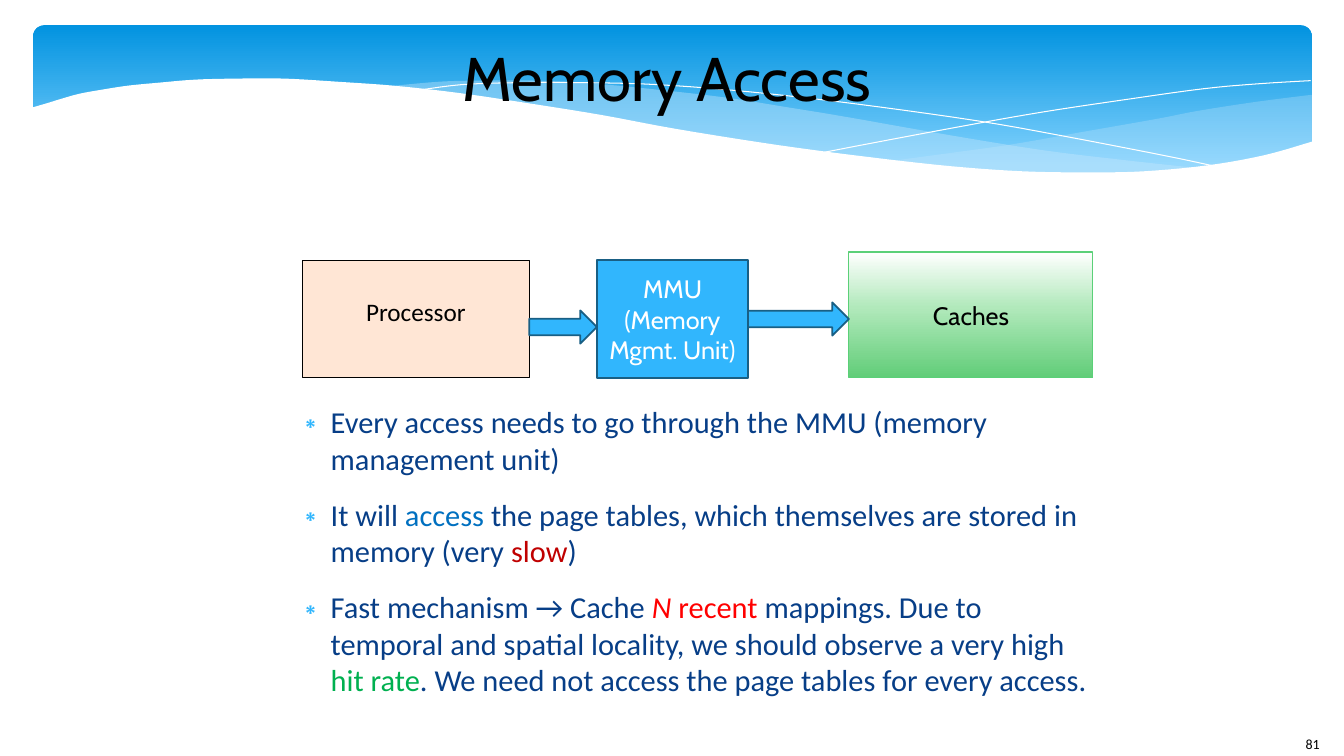
import copy

import pptx
import pptx.dml.color
import pptx.enum.shapes
import pptx.enum.text
import pptx.oxml
import pptx.oxml.ns
import pptx.util
from lxml import etree

PX = 9144  # 100 px to the inch
COLOURS = {
    "black": "000000", "white": "FFFFFF", "band top": "0293E0", "band foot": "83D3FE",
    "wave": "C6E7FC", "peach": "FFE6D5", "sky": "31B6FD", "sky edge": "195F84",
    "mint": "B1E9BB", "green": "61CD78", "green edge": "5BD078", "navy": "073E87",
    "blue": "0070C0", "dark red": "C00000", "red": "FF0000", "leaf": "00B050",
}
SHAPES = pptx.enum.shapes.MSO_SHAPE
MIDDLE = pptx.enum.text.MSO_ANCHOR.MIDDLE
CENTER = pptx.enum.text.PP_ALIGN.CENTER

BAND = (33, 25, 1268, 156)
WAVES = [  # (outline knots, opacity in percent); knots are smoothed
    ([[(1301, 94), (1246, 101), (1188, 110), (1147, 118), (1073, 131), (1005, 143), (941, 152), (882, 160)],
      [(882, 160), (940, 165), (993, 169), (1041, 171), (1085, 172), (1126, 171), (1163, 169),
       (1196, 165), (1238, 158), (1266, 152), (1301, 142)]], 29),
    ([[(1190, 167), (1116, 159), (1034, 149), (941, 134), (839, 116), (778, 106), (721, 97), (652, 89),
       (589, 83), (532, 80), (482, 80), (437, 81), (382, 86)],
      [(382, 86), (456, 94), (539, 106), (599, 116), (706, 135), (802, 150), (887, 161), (963, 168),
       (1030, 172), (1090, 173), (1143, 171), (1190, 167)]], 40),
]
STRANDS = [
    [(412, 90), (458, 84), (516, 82), (577, 82), (652, 84), (742, 91), (848, 103), (970, 120),
     (1060, 136), (1158, 155), (1210, 166)],
    [(818, 151), (870, 141), (961, 124), (1035, 111), (1115, 99), (1194, 88), (1250, 83), (1300, 80)],
]
PAGE_EDGE = [
    [(1303, 140), (1254, 154), (1198, 164), (1134, 170), (1078, 171), (1015, 170), (944, 165), (863, 156),
     (772, 144), (671, 128), (596, 114), (521, 102), (453, 92), (390, 85), (333, 81), (282, 78), (235, 78),
     (194, 79), (158, 82), (127, 85), (101, 89), (79, 93), (61, 98), (48, 102), (31, 107)],
    [(31, 224), (1303, 224)],
]
BULLETS = [
    [("Every access needs to go through the MMU (memory management unit)", "navy")],
    [("It will ", "navy"), ("access ", "blue"),
     ("the page tables, which themselves are stored in memory (very ", "navy"),
     ("slow", "dark red"), (")", "navy")],
    [("Fast mechanism → Cache ", "navy"), ("N", "red"), (" recent ", "red"),
     ("mappings. Due to temporal and spatial locality, we should observe a very high ", "navy"),
     ("hit rate", "leaf"), (". We need not access the page tables for every access.", "navy")],
]


def rgb(name):
    return pptx.dml.color.RGBColor.from_string(COLOURS[name])


def scaled(box):
    return [length * PX for length in box]


def place(shape, box):
    shape.left, shape.top, shape.width, shape.height = scaled(box)


def paint(shape, fill=None, line=None, width=0):
    shape.shadow.inherit = False
    if fill:
        shape.fill.solid()
        shape.fill.fore_color.rgb = rgb(fill)
    else:
        shape.fill.background()
    if line:
        shape.line.color.rgb = rgb(line)
        shape.line.width = pptx.util.Pt(width)
    else:
        shape.line.fill.background()


def shade_downwards(shape, stops):
    """Fill from top to foot with (percent, colour name) stops."""
    shape.fill.gradient()
    shape.fill.gradient_angle = 270
    stop_list = shape._element.spPr.find(".//" + pptx.oxml.ns.qn("a:gsLst"))
    while len(stop_list) < len(stops):
        stop_list.append(copy.deepcopy(stop_list[-1]))
    for stop, (percent, name) in zip(shape.fill.gradient_stops, stops):
        stop.position = percent / 100
        stop.color.rgb = rgb(name)


def write(para, text, size, colour, font="Calibri"):
    span = para.add_run()
    span.text = text
    span.font.size = pptx.util.Pt(size)
    span.font.name = font
    span.font.color.rgb = rgb(colour)
    return span


def clear_insets(frame):
    frame.margin_left = frame.margin_top = frame.margin_right = frame.margin_bottom = 0
    frame.word_wrap = True
    frame.auto_size = pptx.enum.text.MSO_AUTO_SIZE.NONE


def smooth(knots, steps=5):
    """Catmull-Rom points through the knots, in EMU."""
    padded = [knots[0], *knots, knots[-1]]
    points = [tuple(scaled(knots[0]))]
    for a, b, c, d in zip(padded, padded[1:], padded[2:], padded[3:]):
        for step in range(1, steps + 1):
            t = step / steps
            points.append(tuple(
                PX * (q + t * (r - p) / 2 + t * t * (2 * p - 5 * q + 4 * r - s) / 2
                      + t ** 3 * (3 * q - p - 3 * r + s) / 2)
                for p, q, r, s in zip(a, b, c, d)))
    return points


def draw_curve(page, curves, close):
    points = [point for knots in curves for point in smooth(knots)]
    builder = page.shapes.build_freeform(*points[0], scale=1.0)
    builder.add_line_segments(points[1:], close=close)
    return builder.convert_to_shape()


def add_wave_band(page, box):
    band = page.shapes.add_shape(SHAPES.ROUNDED_RECTANGLE, *scaled(box))
    band.adjustments[0] = 0.07
    paint(band)
    shade_downwards(band, [(0, "band top"), (90, "band foot")])
    for curves, opacity in WAVES:
        wave = draw_curve(page, curves, True)
        paint(wave, "wave")
        colour = wave._element.spPr.find(".//" + pptx.oxml.ns.qn("a:srgbClr"))
        etree.SubElement(colour, pptx.oxml.ns.qn("a:alpha"), val=str(opacity * 1000))
    for knots in STRANDS:
        paint(draw_curve(page, [knots], False), line="white")
    paint(draw_curve(page, PAGE_EDGE, True), "white")


def add_title(page, box):
    title = page.shapes.title
    page.shapes._spTree.append(title._element)  # in front of the band
    place(title, box)
    clear_insets(title.text_frame)
    title.text_frame.vertical_anchor = MIDDLE
    para = title.text_frame.paragraphs[0]
    para.alignment = CENTER
    write(para, "Memory Access", 44, "black", "Cabin")


def add_block(page, box, text, fill, line, width, colour="black", font="Cabin"):
    block = page.shapes.add_shape(SHAPES.RECTANGLE, *scaled(box))
    paint(block, fill, line, width)
    block.text_frame.vertical_anchor = MIDDLE
    para = block.text_frame.paragraphs[0]
    para.alignment = CENTER
    write(para, text, 18, colour, font)
    return block


def add_access_path(page, box):
    left, top, width, height = box
    processor = add_block(page, (left, top + 8, 225, height - 8), "Processor",
                          "peach", "black", 0, font="Calibri")
    processor.text_frame.margin_bottom = 19 * PX
    add_block(page, (left + 292, top + 8, 150, height - 8), "MMU (Memory Mgmt. Unit)",
              "sky", "sky edge", 1.25, "white")
    caches = add_block(page, (left + 542, top, width - 542, height), "Caches",
                       "white", "green edge", 0.75)
    shade_downwards(caches, [(0, "white"), (44, "mint"), (100, "green")])
    for start, drop, length in ((225, 58, 67), (442, 50, 100)):
        arrow = page.shapes.add_shape(SHAPES.RIGHT_ARROW, *scaled((left + start, top + drop, length, 33)))
        paint(arrow, "sky", "sky edge", 1.25)


def add_bullets(page, box):
    body = page.placeholders[1]
    place(body, box)
    frame = body.text_frame
    clear_insets(frame)
    for index, spans in enumerate(BULLETS):
        para = frame.add_paragraph() if index else frame.paragraphs[0]
        para.space_before = pptx.util.Pt(0)
        para.space_after = pptx.util.Pt(14.1)
        properties = para._p.get_or_add_pPr()
        properties.set("marL", str(47 * PX))
        properties.set("indent", str(-35 * PX))
        bullet_colour = etree.SubElement(properties, pptx.oxml.ns.qn("a:buClr"))
        etree.SubElement(bullet_colour, pptx.oxml.ns.qn("a:srgbClr"), val=COLOURS["sky"])
        etree.SubElement(properties, pptx.oxml.ns.qn("a:buChar"), char="∗")
        for text, colour in spans:
            span = write(para, text, 21.7, colour)
            if text == "N":
                span.font.italic = True


def add_page_number(page, box):
    number = page.shapes.add_textbox(*scaled(box))
    number.text_frame.word_wrap = True
    write(number.text_frame.paragraphs[0], "81", 10, "black")


def main():
    deck = pptx.Presentation()
    deck.slide_width, deck.slide_height = scaled((1333, 750))
    page = deck.slides.add_slide(deck.slide_layouts[1])
    add_wave_band(page, BAND)
    add_title(page, (256, 25, 811, 102))
    add_access_path(page, (300, 250, 784, 125))
    add_bullets(page, (281, 400, 811, 264))
    add_page_number(page, (1285, 725, 82, 40))
    deck.save("out.pptx")


if __name__ == "__main__":
    main()
